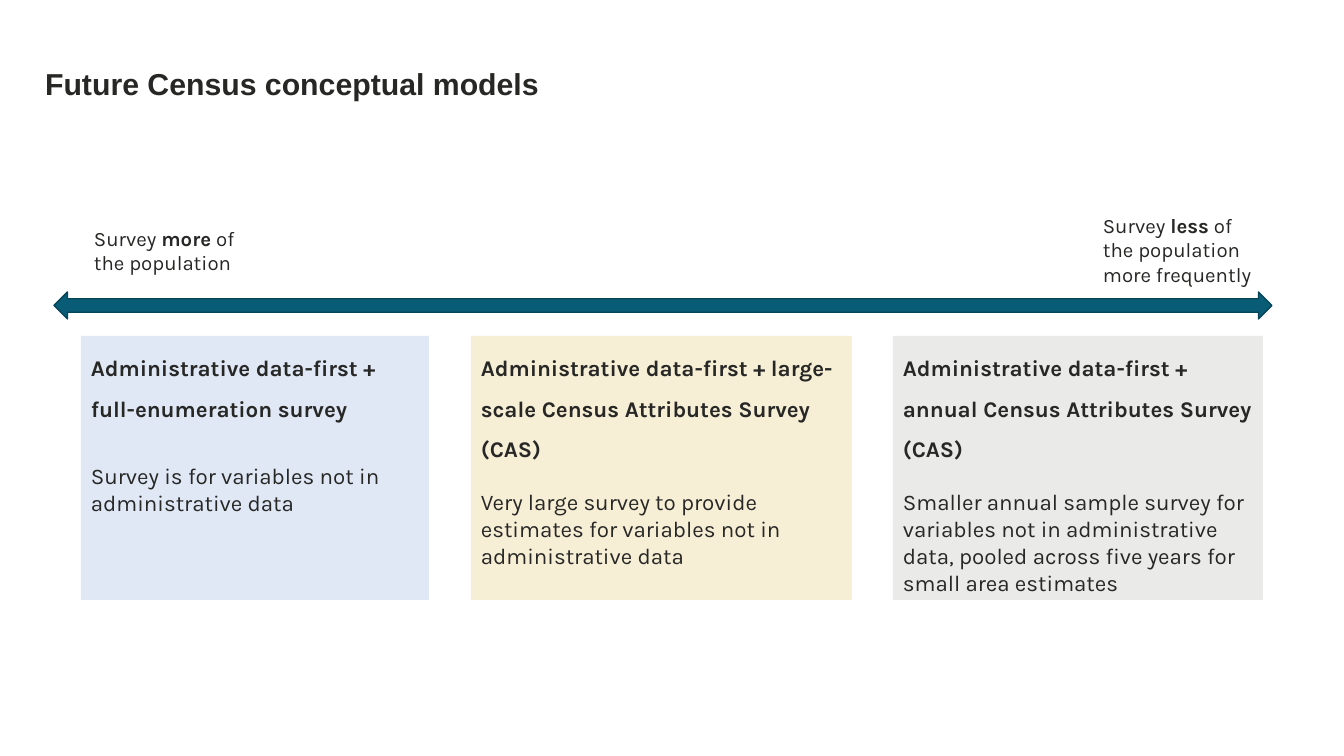
from pptx import Presentation
from pptx.dml.color import RGBColor
from pptx.enum.shapes import MSO_SHAPE
from pptx.enum.text import MSO_ANCHOR, MSO_AUTO_SIZE, PP_ALIGN
from pptx.util import Emu, Pt

RECT = MSO_SHAPE.RECTANGLE
ARROW = MSO_SHAPE.LEFT_RIGHT_ARROW
TOP, MIDDLE = MSO_ANCHOR.TOP, MSO_ANCHOR.MIDDLE
LEFT = PP_ALIGN.LEFT
FIXED = MSO_AUTO_SIZE.NONE
PX = 914400 / 100.8
INK = "272726"


def place(*px):
    """Turn px lengths into EMU."""
    return [Emu(round(n * PX)) for n in px]


def paint(color, code):
    """Give a fill or font colour a solid hex value."""
    color.rgb = RGBColor.from_string(code)


deck = Presentation()
deck.slide_width, deck.slide_height = place(1344, 756)
slide = deck.slides.add_slide(deck.slide_layouts[5])
shapes = slide.shapes

# Title
title = shapes.title
title.left, title.top, title.width, title.height = place(35, 63, 1116, 46)
frame = title.text_frame
frame.text = "Future Census conceptual models"
frame.auto_size = FIXED
frame.vertical_anchor = MIDDLE
para = frame.paragraphs[0]
para.alignment = LEFT
para.line_spacing = 0.9
para.font.name, para.font.size, para.font.bold = "Arial", Pt(21.6), True
paint(para.font.color, INK)

# Scale arrow
arrow = shapes.add_shape(ARROW, *place(54, 292, 1218, 27))
arrow.shadow.inherit = False
arrow.fill.solid()
paint(arrow.fill.fore_color, "085C75")
paint(arrow.line.color, "064457")
arrow.line.width = Pt(1)

# Labels at the two ends of the scale
ends = [
    (84, 221, 59, "more", " of the population"),
    (1093, 208, 84, "less", " of the population more frequently"),
]
for x, y, high, word, rest in ends:
    frame = shapes.add_textbox(*place(x, y, 170, high)).text_frame
    frame.word_wrap = True
    para = frame.paragraphs[0]
    para.font.name, para.font.size = "Karla", Pt(14.6)
    paint(para.font.color, INK)
    for text in ("Survey ", word, rest):
        run = para.add_run()
        run.text = text
        run.font.bold = text == word

# Model cards: left, width, fill, heading, gap in points, body
cards = [
    (81, 348, "E0E8F5", "Administrative data-first + full-enumeration survey", 29,
     "Survey is for variables not in administrative data"),
    (471, 381, "F6EED5",
     "Administrative data-first + large-scale Census Attributes Survey (CAS)", 19,
     "Very large survey to provide estimates for variables not in administrative data"),
    (893, 370, "EAEAE9",
     "Administrative data-first + annual Census Attributes Survey (CAS)", 19,
     "Smaller annual sample survey for variables not in administrative data, "
     "pooled across five years for small area estimates"),
]
for x, wide, tint, head, gap, body in cards:
    card = shapes.add_shape(RECT, *place(x, 336, wide, 264))
    card.shadow.inherit = False
    card.fill.solid()
    paint(card.fill.fore_color, tint)
    card.line.fill.background()
    frame = card.text_frame
    frame.word_wrap = True
    frame.vertical_anchor = TOP
    frame.text = f"{head}\n{body}"
    first, last = frame.paragraphs
    first.line_spacing = 1.5
    last.space_before = Pt(gap)
    for para in (first, last):
        para.alignment = LEFT
        para.font.name, para.font.size = "Karla", Pt(16)
        para.font.bold = para is first
        paint(para.font.color, INK)

deck.save("out.pptx")
